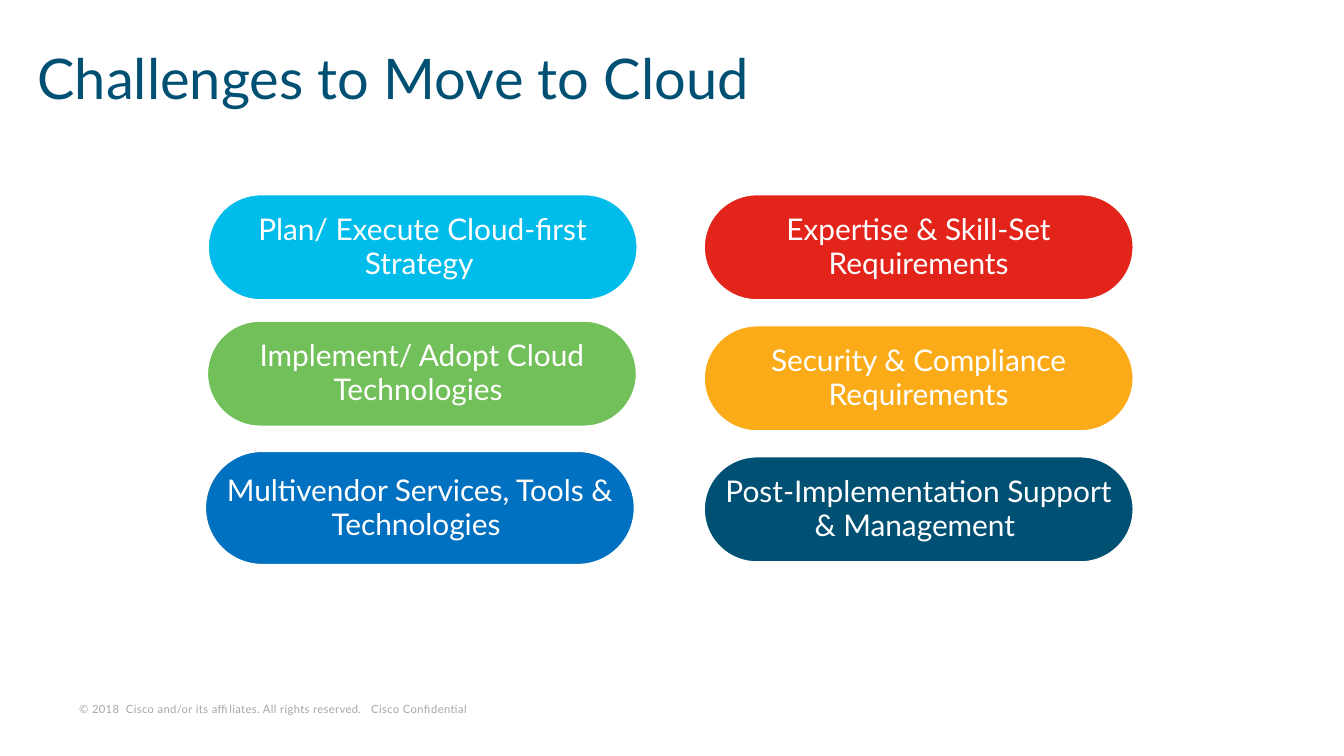
from pptx import Presentation
from pptx.dml.color import RGBColor
from pptx.enum.shapes import MSO_SHAPE
from pptx.enum.text import MSO_ANCHOR, PP_ALIGN
from pptx.util import Pt

ROUNDED = MSO_SHAPE.ROUNDED_RECTANGLE
MIDDLE, BOTTOM = MSO_ANCHOR.MIDDLE, MSO_ANCHOR.BOTTOM
LEFT, CENTER = PP_ALIGN.LEFT, PP_ALIGN.CENTER

FONT = "Lato"
NAVY, WHITE, GRAY = "005073", "FFFFFF", "A6A6A6"
PILL_WIDTH, PILL_HEIGHT = 231.1, 57.6
RIGHT_COLUMN, FIRST_ROW, RIGHT_PITCH = 376.6, 103.7, 70.2

LEFT_PILLS = [
    ("Plan/ Execute Cloud-first Strategy ", "00BCEB", 110.9, FIRST_ROW, PILL_HEIGHT),
    ("Implement/ Adopt Cloud Technologies ", "72C059", 110.5, 171.4, PILL_HEIGHT),
    ("Multivendor Services, Tools & Technologies ", "0070C0", 109.4, 241.2, 61.9),
]
RIGHT_PILLS = [
    ("Expertise & Skill-Set Requirements", "E3241B"),
    ("Security & Compliance Requirements", "FBAB18"),
    ("Post-Implementation Support & Management ", NAVY),
]


def color(value):
    """Turn a hex string into a colour."""
    return RGBColor.from_string(value)


def write_text(shape, text, size, fill, anchor, align, margins, line_spacing=1.0):
    """Write one styled paragraph into a shape and return its run."""
    frame = shape.text_frame
    frame.word_wrap = True
    frame.vertical_anchor = anchor
    frame.margin_left = frame.margin_right = Pt(margins[0])
    frame.margin_top = frame.margin_bottom = Pt(margins[1])
    paragraph = frame.paragraphs[0]
    paragraph.alignment = align
    paragraph.line_spacing = line_spacing
    run = paragraph.add_run()
    run.text = text
    run.font.name = FONT
    run.font.size = Pt(size)
    run.font.color.rgb = color(fill)
    return run


def add_title(slide, text):
    """Add the slide title."""
    box = slide.shapes.add_textbox(Pt(13), Pt(15.8), Pt(657.4), Pt(57.6))
    write_text(box, text, 30, NAVY, MIDDLE, LEFT, (7.2, 3.6), 0.8)


def add_footer(slide, text):
    """Add the copyright line with slightly spaced letters."""
    box = slide.shapes.add_textbox(Pt(37.4), Pt(373.7), Pt(267.8), Pt(12.2))
    run = write_text(box, text, 6, GRAY, BOTTOM, LEFT, (5, 2.2))
    run._r.get_or_add_rPr().set("spc", "20")


def add_pill(slide, text, fill, left, top, height=PILL_HEIGHT):
    """Add a fully rounded challenge label."""
    pill = slide.shapes.add_shape(ROUNDED, Pt(left), Pt(top), Pt(PILL_WIDTH), Pt(height))
    pill.adjustments[0] = 0.5
    pill.shadow.inherit = False
    pill.fill.solid()
    pill.fill.fore_color.rgb = color(fill)
    pill.line.color.rgb = color(WHITE)
    pill.line.width = Pt(2)
    write_text(pill, text, 16, WHITE, MIDDLE, CENTER, (0, 0), 0.95)


def main():
    """Build and save the slide."""
    presentation = Presentation()
    presentation.slide_width, presentation.slide_height = Pt(720), Pt(405)
    slide = presentation.slides.add_slide(presentation.slide_layouts[6])
    add_footer(slide, "© 2018  Cisco and/or its affiliates. All rights reserved.   Cisco Confidential")
    add_title(slide, "Challenges to Move to Cloud")
    for pill in LEFT_PILLS:
        add_pill(slide, *pill)
    for row, (text, fill) in enumerate(RIGHT_PILLS):
        add_pill(slide, text, fill, RIGHT_COLUMN, FIRST_ROW + row * RIGHT_PITCH)
    presentation.save("out.pptx")


if __name__ == "__main__":
    main()
